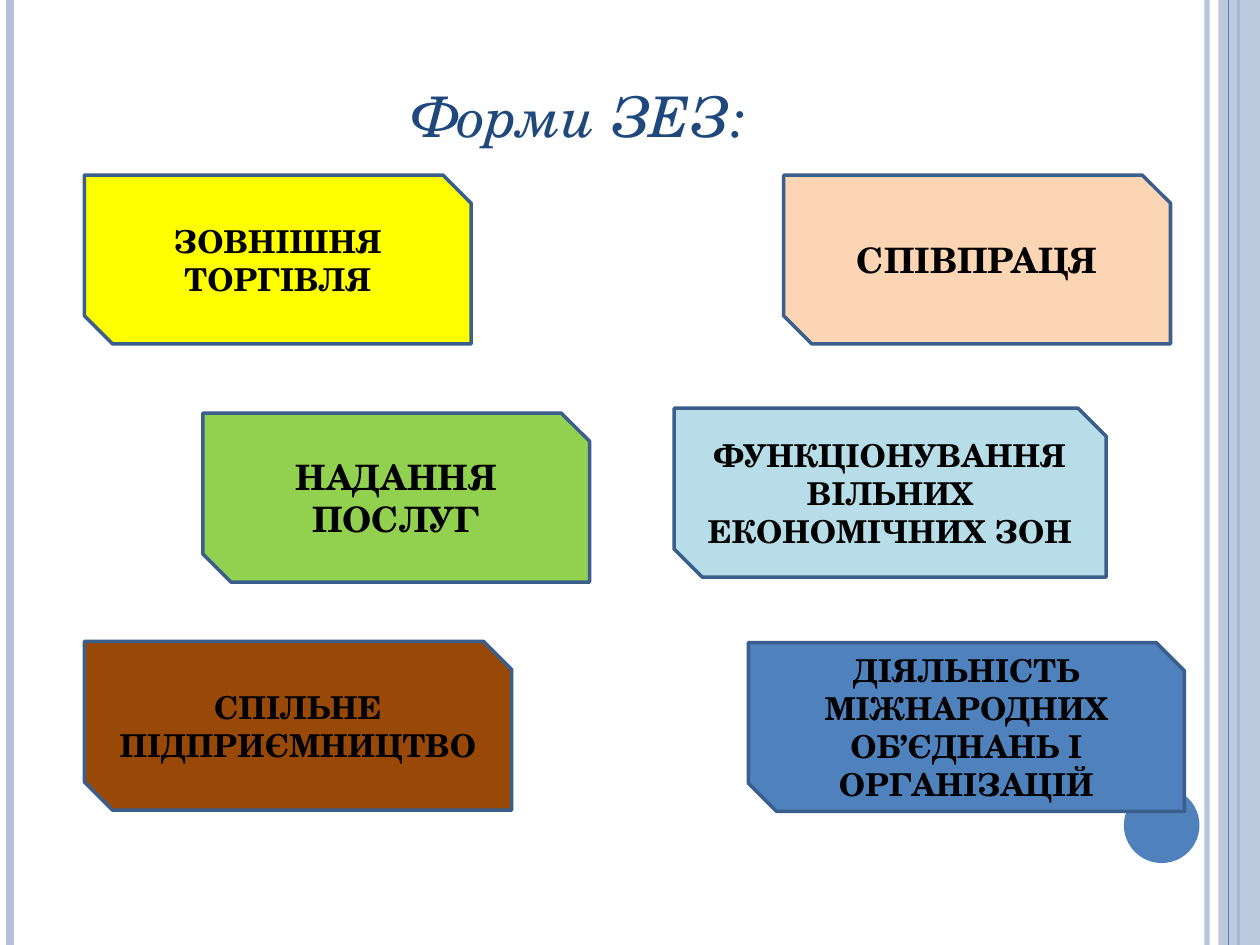
from lxml import etree
from pptx import Presentation
from pptx.dml.color import RGBColor
from pptx.enum.shapes import MSO_CONNECTOR, MSO_SHAPE
from pptx.enum.text import MSO_ANCHOR, MSO_AUTO_SIZE, PP_ALIGN
from pptx.oxml.ns import qn
from pptx.util import Inches, Pt

STRAIGHT = MSO_CONNECTOR.STRAIGHT
RECTANGLE, OVAL = MSO_SHAPE.RECTANGLE, MSO_SHAPE.OVAL
SNIPPED = MSO_SHAPE.SNIP_2_DIAG_RECTANGLE
MIDDLE, FIT_SHAPE = MSO_ANCHOR.MIDDLE, MSO_AUTO_SIZE.SHAPE_TO_FIT_TEXT
LEFT, CENTER = PP_ALIGN.LEFT, PP_ALIGN.CENTER

WIDTH, HEIGHT = 10, 7.5
FORM_HEIGHT = 1.34
FONT = "TeX Gyre Schola"
COLORS = {
    "pale": "B3C1DB", "accent": "4F81BD", "border": "3A5F8C",
    "title": "1F497D", "text": "000000", "yellow": "FFFF00",
    "peach": "FCD5B5", "green": "92D050", "aqua": "B7DEE8", "brown": "984807",
}
STRIPES = [
    (9.58, "pale", 3, 93),
    (0.08, "pale", 4.5, 100),
    (9.83, "accent", 1.5, 100),
]
FORMS = [
    ("ЗОВНІШНЯ ТОРГІВЛЯ", 0.67, 1.39, 3.07, "yellow", 18),
    ("СПІВПРАЦЯ", 6.22, 1.39, 3.07, "peach", 20),
    ("НАДАННЯ ПОСЛУГ", 1.61, 3.28, 3.07, "green", 20),
    ("ФУНКЦІОНУВАННЯ ВІЛЬНИХ ЕКОНОМІЧНИХ ЗОН", 5.35, 3.24, 3.43, "aqua", 18),
    ("СПІЛЬНЕ ПІДПРИЄМНИЦТВО", 0.67, 5.09, 3.39, "brown", 18),
    ("ДІЯЛЬНІСТЬ МІЖНАРОДНИХ ОБ’ЄДНАНЬ І ОРГАНІЗАЦІЙ", 5.94, 5.1, 3.46, "accent", 18),
]


def write(frame, text, size, color="text", bold=False, italic=False, align=CENTER):
    frame.word_wrap = True
    paragraph = frame.paragraphs[0]
    paragraph.alignment = align
    run = paragraph.add_run()
    run.text = text
    font = run.font
    font.name, font.size = FONT, Pt(size)
    font.bold, font.italic = bold, italic
    font.color.rgb = RGBColor.from_string(COLORS[color])


def paint(fill, color, opacity=100):
    fill.solid()
    fill.fore_color.rgb = RGBColor.from_string(COLORS[color])
    if opacity < 100:
        tint = fill._xPr.find(".//" + qn("a:srgbClr"))
        etree.SubElement(tint, qn("a:alpha"), val=str(opacity * 1000))


class SlideBuilder:
    """Draws the elements of the slide in one shared style."""

    def __init__(self, slide):
        self.shapes = slide.shapes

    def stripe(self, x, color, weight, opacity=100):
        line = self.shapes.add_connector(
            STRAIGHT, Inches(x), Inches(0), Inches(x), Inches(HEIGHT))
        line.line.width = Pt(weight)
        paint(line.line.fill, color, opacity)
        etree.SubElement(line._element.spPr, qn("a:effectLst"))

    def block(self, kind, left, top, width, height, color, opacity=100):
        shape = self.shapes.add_shape(
            kind, Inches(left), Inches(top), Inches(width), Inches(height))
        shape.shadow.inherit = False
        paint(shape.fill, color, opacity)
        shape.line.fill.background()
        return shape

    def title(self, text, left, top, width, height):
        box = self.shapes.add_textbox(
            Inches(left), Inches(top), Inches(width), Inches(height))
        write(box.text_frame, text, 32, color="title", italic=True, align=LEFT)
        box.text_frame.auto_size = FIT_SHAPE

    def form(self, text, left, top, width, color, size):
        shape = self.block(SNIPPED, left, top, width, FORM_HEIGHT, color)
        paint(shape.line.fill, "border")
        shape.line.width = Pt(2)
        shape.text_frame.vertical_anchor = MIDDLE
        write(shape.text_frame, text, size, bold=True)


def main():
    deck = Presentation()
    deck.slide_width, deck.slide_height = Inches(WIDTH), Inches(HEIGHT)
    builder = SlideBuilder(deck.slides.add_slide(deck.slide_layouts[6]))
    for stripe in STRIPES:
        builder.stripe(*stripe)
    builder.block(RECTANGLE, 9.67, 0, 0.33, HEIGHT, "pale", opacity=87)
    builder.stripe(9.75, "accent", 0.75)
    builder.block(OVAL, 8.92, 6.25, 0.6, 0.6, "accent")
    builder.title("Форми ЗЕЗ:", 3.19, 0.6, 3.7, 0.64)
    for form in FORMS:
        builder.form(*form)
    deck.save("out.pptx")


if __name__ == "__main__":
    main()
